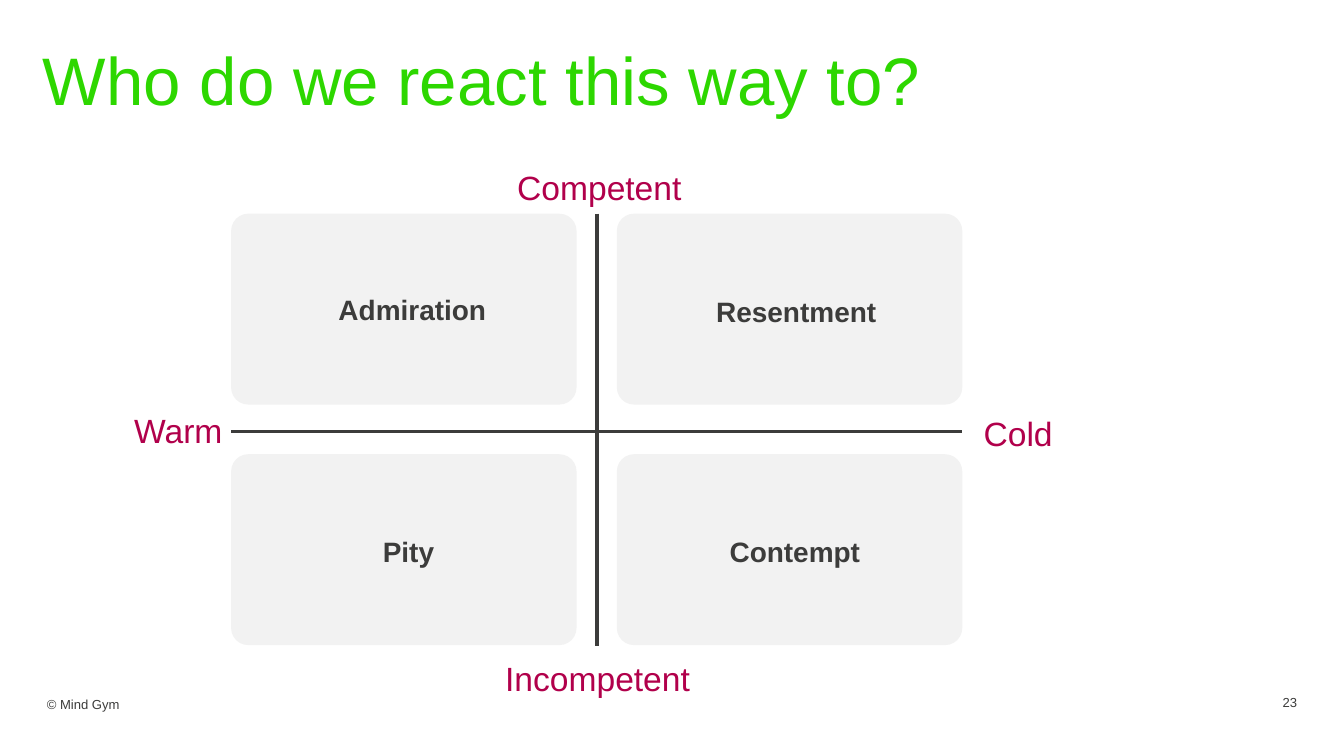
from dataclasses import dataclass

from lxml import etree
from pptx import Presentation
from pptx.dml.color import RGBColor
from pptx.enum import shapes, text
from pptx.oxml import ns
from pptx.util import Pt

GREEN = RGBColor(0x2D, 0xD7, 0x00)
CHARCOAL = RGBColor(0x3C, 0x3C, 0x3B)
CRIMSON = RGBColor(0xB1, 0x00, 0x4B)
PALE_GREY = RGBColor(0xF2, 0xF2, 0xF2)

COLUMNS = (123.84, 330.48)
ROWS = (114.48, 243.36)
CARD_WIDTH, CARD_HEIGHT = 185.04, 102.24


@dataclass(frozen=True)
class Label:
    wording: str
    left: float
    top: float
    width: float
    height: float
    size: float
    color: RGBColor
    bold: bool = False
    wrap: bool = False
    fit: bool = True
    inset: bool = True
    leading: float | None = None
    align: text.PP_ALIGN = text.PP_ALIGN.LEFT
    anchor: text.MSO_ANCHOR = text.MSO_ANCHOR.TOP


@dataclass(frozen=True)
class Axis:
    x1: float
    y1: float
    x2: float
    y2: float


def emotion(wording: str, left: float, top: float, width: float, wrap: bool = False) -> Label:
    return Label(wording, left, top, width, 25.2, 15, CHARCOAL, bold=True, wrap=wrap)


def pole(wording: str, left: float, top: float, width: float) -> Label:
    return Label(wording, left, top, width, 28.8, 18, CRIMSON)


TITLE = Label("Who do we react this way to?", 23.04, 25.2, 578.16, 41.04, 36, GREEN,
              wrap=True, fit=False, inset=False, leading=36, anchor=text.MSO_ANCHOR.MIDDLE)
PAGE_NUMBER = Label("23", 674.64, 372.24, 20.16, 8.64, 7, CHARCOAL,
                    wrap=True, inset=False, align=text.PP_ALIGN.RIGHT)
COPYRIGHT = Label("© Mind Gym", 25.2, 372.24, 228.24, 13.68, 7, CHARCOAL,
                  wrap=True, fit=False, inset=False, leading=9)
EMOTIONS = (
    emotion("Admiration", 174.24, 153.36, 94.32),
    emotion("Resentment", 376.56, 154.08, 102.96, wrap=True),
    emotion("Pity", 198, 282.96, 42.48),
    emotion("Contempt", 383.76, 282.96, 90, wrap=True),
)
POLES = (
    pole("Competent", 270, 85.68, 103.68),
    pole("Incompetent", 263.52, 349.2, 114.48),
    pole("Warm", 64.8, 216, 62.64),
    pole("Cold", 519.84, 217.44, 51.84),
)
AXES = (Axis(319.68, 114.48, 319.68, 346.32), Axis(123.84, 231.12, 515.52, 231.12))


def draw_label(slide, label: Label) -> None:
    box = slide.shapes.add_textbox(
        Pt(label.left), Pt(label.top), Pt(label.width), Pt(label.height))
    frame = box.text_frame
    frame.word_wrap = label.wrap
    frame.vertical_anchor = label.anchor
    frame.auto_size = (text.MSO_AUTO_SIZE.SHAPE_TO_FIT_TEXT if label.fit
                       else text.MSO_AUTO_SIZE.NONE)
    if not label.inset:
        frame.margin_left = frame.margin_right = Pt(0)
        frame.margin_top = frame.margin_bottom = Pt(0)
    paragraph = frame.paragraphs[0]
    paragraph.text = label.wording
    paragraph.alignment = label.align
    if label.leading:
        paragraph.line_spacing = Pt(label.leading)
    font = paragraph.font
    font.name = "Arial"
    font.size = Pt(label.size)
    font.bold = label.bold
    font.color.rgb = label.color


def draw_card(slide, left: float, top: float) -> None:
    card = slide.shapes.add_shape(
        shapes.MSO_SHAPE.ROUNDED_RECTANGLE,
        Pt(left), Pt(top), Pt(CARD_WIDTH), Pt(CARD_HEIGHT))
    card.adjustments[0] = 0.09
    card.shadow.inherit = False
    card.fill.solid()
    card.fill.fore_color.rgb = PALE_GREY
    card.line.fill.background()


def draw_axis(slide, axis: Axis) -> None:
    line = slide.shapes.add_connector(
        shapes.MSO_CONNECTOR.STRAIGHT,
        Pt(axis.x1), Pt(axis.y1), Pt(axis.x2), Pt(axis.y2))
    line.line.color.rgb = CHARCOAL
    line.line.width = Pt(2)
    etree.SubElement(line._element.spPr, ns.qn("a:effectLst"))


def main() -> None:
    deck = Presentation()
    deck.slide_width, deck.slide_height = Pt(720), Pt(405)
    slide = deck.slides.add_slide(deck.slide_layouts[6])
    for axis in AXES:
        draw_axis(slide, axis)
    for top in ROWS:
        for left in COLUMNS:
            draw_card(slide, left, top)
    for label in (TITLE, *EMOTIONS, *POLES, COPYRIGHT, PAGE_NUMBER):
        draw_label(slide, label)
    deck.save("out.pptx")


if __name__ == "__main__":
    main()
